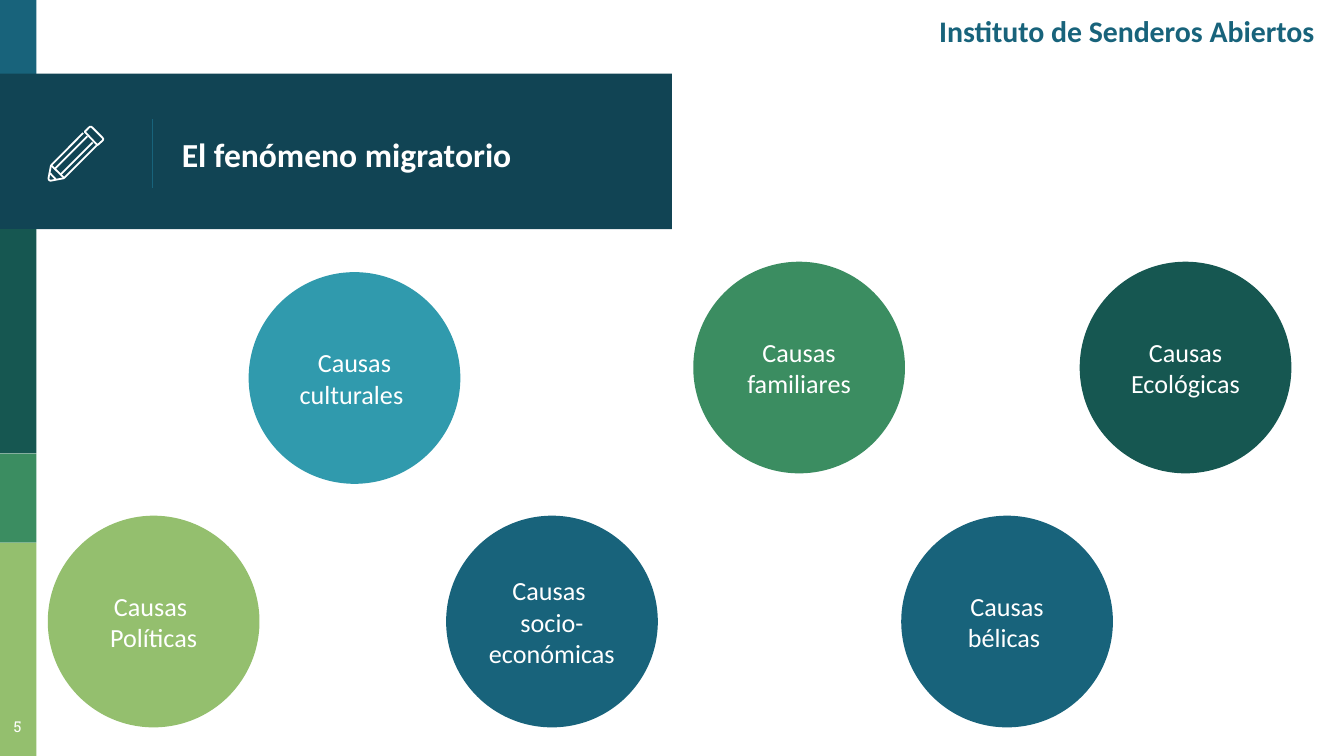
"""Build the slide on the causes of migration."""
from typing import NamedTuple

from lxml import etree
from pptx import Presentation
from pptx import util as u
from pptx.dml import color
from pptx.enum import shapes, text
from pptx.oxml import ns

WHITE, NAVY, BLUE, TEAL = "FFFFFF", "114454", "18637B", "309AAD"
PINE, GREEN, LIME = "165751", "3B8D61", "94BF6E"
SANS, SLAB = "Calibri", "Roboto Slab"
SIDE = 113.4
HIGH, LOW = 140.2, 276.3


class Bar(NamedTuple):
    top: float
    wide: float
    tall: float
    fill: str


class Cause(NamedTuple):
    left: float
    top: float
    fill: str
    paras: tuple


class Label(NamedTuple):
    box: tuple
    words: str
    size: float
    font: str
    hue: str
    bold: bool
    align: text.PP_ALIGN
    anchor: text.MSO_ANCHOR
    inset: float


class Stroke(NamedTuple):
    points: tuple
    closed: bool = False


BARS = (
    Bar(0, 19.5, 41.8, BLUE),
    Bar(39.5, 360, 83.3, NAVY),
    Bar(122.8, 19.5, 120.2, PINE),
    Bar(243, 19.5, 47.8, GREEN),
    Bar(290.8, 19.5, 114.2, LIME),
)

CAUSES = (
    Cause(133.2, 145.8, TEAL, ("Causas culturales ",)),
    Cause(239, LOW, BLUE, ("Causas \nsocio-económicas",)),
    Cause(578.4, HIGH, PINE, ("Causas Ecológicas",)),
    Cause(371.4, HIGH, GREEN, ("Causas familiares",)),
    Cause(482.8, LOW, BLUE, ("Causas bélicas ",)),
    Cause(25.6, LOW, LIME, ("Causas ", "Políticas")),
)

LABELS = (
    Label((90.3, 42.1, 270, 80.6), "El fenómeno migratorio", 18, SANS, WHITE, True,
          text.PP_ALIGN.LEFT, text.MSO_ANCHOR.MIDDLE, 7.2),
    Label((445, 4.3, 266.4, 44), "Instituto de Senderos Abiertos", 16, SANS, BLUE, True,
          text.PP_ALIGN.RIGHT, text.MSO_ANCHOR.TOP, 2.6),
    Label((-4.3, 379.5, 27.4, 25.2), "5", 8, SLAB, WHITE, False,
          text.PP_ALIGN.CENTER, text.MSO_ANCHOR.TOP, 9.2),
)

PENCIL = (
    Stroke(((45.4, 70.6), (47.6, 68.4), (48.2, 67.9), (48.9, 67.9), (49.4, 68.3),
            (54.9, 73.8), (55.3, 74.4), (55.2, 75), (54.8, 75.5), (52.2, 77.8)), True),
    Stroke(((49.6, 76.3), (32.4, 93.5))),
    Stroke(((44.6, 71.3), (27.6, 88.4), (27.3, 89), (26, 95.6), (26.2, 96.4),
            (26.8, 96.8), (27.4, 96.8), (33.9, 95.6), (34.6, 95.2), (51.8, 78))),
    Stroke(((29.6, 90.2), (46.8, 73))),
    Stroke(((29.9, 96.1), (26.8, 92.8))),
    Stroke(((27.5, 88.6), (34.3, 95.3))),
)


def tint(code: str) -> color.RGBColor:
    """Turn a hex string into a colour."""
    return color.RGBColor.from_string(code)


def paint(shape, code: str) -> None:
    """Give a shape a flat fill with no line or shadow."""
    shape.shadow.inherit = False
    shape.fill.solid()
    shape.fill.fore_color.rgb = tint(code)
    shape.line.fill.background()


def write(para, words: str, size: float, font: str, hue: str, bold: bool = False) -> None:
    """Add the words to a paragraph as runs, one for each line."""
    for i, line in enumerate(words.split("\n")):
        if i:
            para.add_line_break()
        run = para.add_run()
        run.text = line
        run.font.size = u.Pt(size)
        run.font.name = font
        run.font.bold = bold
        run.font.color.rgb = tint(hue)


def pad(frame, side: float, head: float) -> None:
    """Set the insets of a wrapped text frame."""
    frame.word_wrap = True
    frame.margin_left = frame.margin_right = u.Pt(side)
    frame.margin_top = frame.margin_bottom = u.Pt(head)


def draw_bar(slide, bar: Bar) -> None:
    """Draw a bar from the left edge of the slide."""
    shape = slide.shapes.add_shape(shapes.MSO_SHAPE.RECTANGLE, 0, u.Pt(bar.top),
                                   u.Pt(bar.wide), u.Pt(bar.tall))
    paint(shape, bar.fill)


def draw_cause(slide, cause: Cause) -> None:
    """Draw a circle with its cause."""
    shape = slide.shapes.add_shape(shapes.MSO_SHAPE.OVAL, u.Pt(cause.left),
                                   u.Pt(cause.top), u.Pt(SIDE), u.Pt(SIDE))
    paint(shape, cause.fill)
    frame = shape.text_frame
    pad(frame, 0, 0)
    frame.vertical_anchor = text.MSO_ANCHOR.MIDDLE
    for i, words in enumerate(cause.paras):
        para = frame.add_paragraph() if i else frame.paragraphs[0]
        para.alignment = text.PP_ALIGN.CENTER
        write(para, words, 14, SANS, WHITE)


def draw_label(slide, label: Label) -> None:
    """Draw a text box."""
    frame = slide.shapes.add_textbox(*map(u.Pt, label.box)).text_frame
    pad(frame, 7.2, label.inset)
    frame.vertical_anchor = label.anchor
    para = frame.paragraphs[0]
    para.alignment = label.align
    write(para, label.words, label.size, label.font, label.hue, label.bold)


def draw_stroke(slide, stroke: Stroke) -> None:
    """Draw one outline of the pencil."""
    start, *rest = [(u.Pt(x), u.Pt(y)) for x, y in stroke.points]
    pen = slide.shapes.build_freeform(*start)
    pen.add_line_segments(rest, close=stroke.closed)
    shape = pen.convert_to_shape()
    shape.shadow.inherit = False
    shape.fill.background()
    shape.line.color.rgb = tint(WHITE)
    shape.line.width = u.Pt(0.96)


def draw_rule(slide) -> None:
    """Draw the thin rule between pencil and title."""
    rule = slide.shapes.add_connector(shapes.MSO_CONNECTOR.STRAIGHT, u.Pt(81.6),
                                      u.Pt(64), u.Pt(81.6), u.Pt(100.8))
    rule.line.color.rgb = tint(BLUE)
    rule.line.width = u.Pt(0.75)
    etree.SubElement(rule.element.spPr, ns.qn("a:effectLst"))


def main() -> None:
    """Build and save the slide."""
    deck = Presentation()
    deck.slide_width, deck.slide_height = u.Pt(720), u.Pt(405)
    slide = deck.slides.add_slide(deck.slide_layouts[6])
    for bar in BARS:
        draw_bar(slide, bar)
    draw_rule(slide)
    for stroke in PENCIL:
        draw_stroke(slide, stroke)
    for label in LABELS:
        draw_label(slide, label)
    for cause in CAUSES:
        draw_cause(slide, cause)
    deck.save("out.pptx")


if __name__ == "__main__":
    main()
